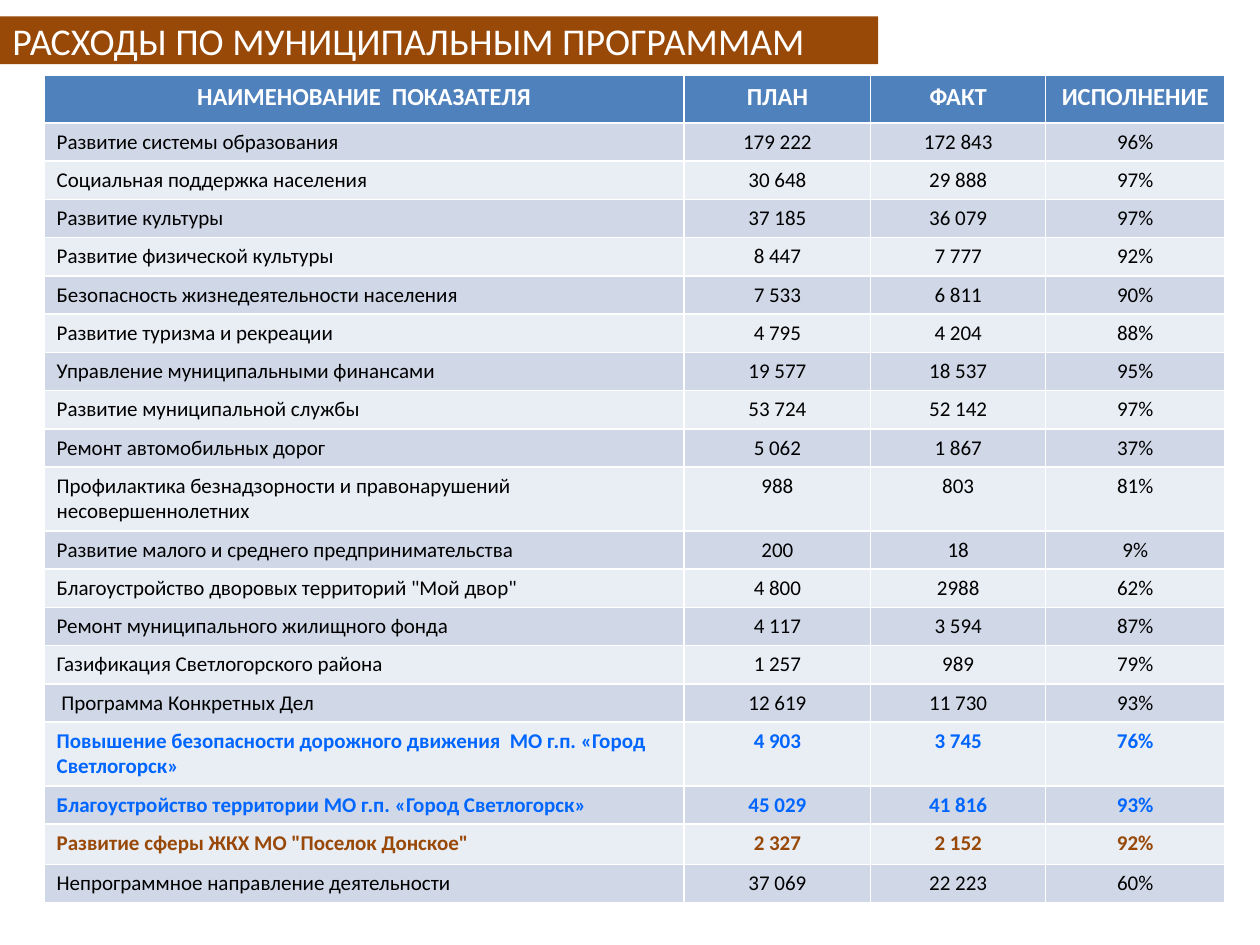
import pptx
import pptx.dml.color
import pptx.enum.shapes
import pptx.enum.text
import pptx.util

COLS, ROWS = 100, 75
INK = {
    "white": "FFFFFF",
    "black": "000000",
    "brown": "984807",
    "blue": "0066FF",
    "head": "4F81BD",
    "odd": "D0D8E8",
    "even": "E9EDF4",
}
WIDTHS = [50.8, 14.8, 13.9, 14.2]
HEAD = ["НАИМЕНОВАНИЕ  ПОКАЗАТЕЛЯ", "ПЛАН", "ФАКТ", "ИСПОЛНЕНИЕ"]
COSTS = [
    ["Развитие системы образования", "179 222", "172 843", "96%"],
    ["Социальная поддержка населения", "30 648", "29 888", "97%"],
    ["Развитие культуры", "37 185", "36 079", "97%"],
    ["Развитие физической культуры", "8 447", "7 777", "92%"],
    ["Безопасность жизнедеятельности населения", "7 533", "6 811", "90%"],
    ["Развитие туризма и рекреации", "4 795", "4 204", "88%"],
    ["Управление муниципальными финансами", "19 577", "18 537", "95%"],
    ["Развитие муниципальной службы", "53 724", "52 142", "97%"],
    ["Ремонт автомобильных дорог", "5 062", "1 867", "37%"],
    ["Профилактика безнадзорности и правонарушений несовершеннолетних", "988", "803", "81%"],
    ["Развитие малого и среднего предпринимательства", "200", "18", "9%"],
    ["Благоустройство дворовых территорий \"Мой двор\"", "4 800", "2988", "62%"],
    ["Ремонт муниципального жилищного фонда", "4 117", "3 594", "87%"],
    ["Газификация Светлогорского района", "1 257", "989", "79%"],
    [" Программа Конкретных Дел", "12 619", "11 730", "93%"],
    ["Повышение безопасности дорожного движения  МО г.п. «Город Светлогорск»", "4 903", "3 745", "76%"],
    ["Благоустройство территории МО г.п. «Город Светлогорск»", "45 029", "41 816", "93%"],
    ["Развитие сферы ЖКХ МО \"Поселок Донское\"", "2 327", "2 152", "92%"],
    ["Непрограммное направление деятельности", "37 069", "22 223", "60%"],
]
TINTS = {16: "blue", 17: "blue", 18: "brown"}
TALL = {0: 3.75, 10: 4.7, 16: 4.7, 18: 3.2}
LINE = 2.8


def tone(name):
    return pptx.dml.color.RGBColor.from_string(INK[name])


def put(frame, text, size=12, color="black", bold=False, mid=False, font="Calibri"):
    align = pptx.enum.text.PP_ALIGN
    para = frame.paragraphs[0]
    para.alignment = align.CENTER if mid else align.LEFT
    run = para.add_run()
    run.text = text
    run.font.name = font
    run.font.size = pptx.util.Pt(size)
    run.font.bold = bold
    run.font.color.rgb = tone(color)


class Page:
    def __init__(self, deck):
        self.wide = deck.slide_width
        self.high = deck.slide_height
        self.slide = deck.slides.add_slide(deck.slide_layouts[6])

    def across(self, count):
        return round(self.wide * count / COLS)

    def down(self, count):
        return round(self.high * count / ROWS)

    def area(self, left, top, width, height):
        return self.across(left), self.down(top), self.across(width), self.down(height)

    def banner(self, text, box, fill):
        kind = pptx.enum.shapes.MSO_SHAPE.RECTANGLE
        bar = self.slide.shapes.add_shape(kind, *self.area(*box))
        bar.shadow.inherit = False
        bar.fill.solid()
        bar.fill.fore_color.rgb = tone(fill)
        bar.line.fill.background()
        frame = bar.text_frame
        frame.word_wrap = True
        frame.vertical_anchor = pptx.enum.text.MSO_ANCHOR.MIDDLE
        put(frame, text, size=21.6, color="white")

    def table(self, left, top, widths, rows):
        highs = [TALL.get(i, LINE) for i in range(len(rows))]
        box = self.area(left, top, sum(widths), sum(highs))
        grid = self.slide.shapes.add_table(len(rows), len(widths), *box).table
        for col, width in zip(grid.columns, widths):
            col.width = self.across(width)
        for i, (row, high) in enumerate(zip(rows, highs)):
            grid.rows[i].height = self.down(high)
            if i == 0:
                fill, look = "head", dict(size=14, color="white", bold=True)
            else:
                fill = "odd" if i % 2 else "even"
                look = dict(color=TINTS.get(i, "black"), bold=i in TINTS)
            for j, text in enumerate(row):
                cell = grid.cell(i, j)
                cell.fill.solid()
                cell.fill.fore_color.rgb = tone(fill)
                put(cell.text_frame, text, mid=i == 0 or j > 0, **look)


def main():
    deck = pptx.Presentation()
    deck.slide_width = pptx.util.Inches(10)
    deck.slide_height = pptx.util.Inches(7.5)
    page = Page(deck)
    page.banner("РАСХОДЫ ПО МУНИЦИПАЛЬНЫМ ПРОГРАММАМ", (0, 1.3, 69.7, 3.8), "brown")
    page.table(3.5, 6, WIDTHS, [HEAD] + COSTS)
    deck.save("out.pptx")


if __name__ == "__main__":
    main()
